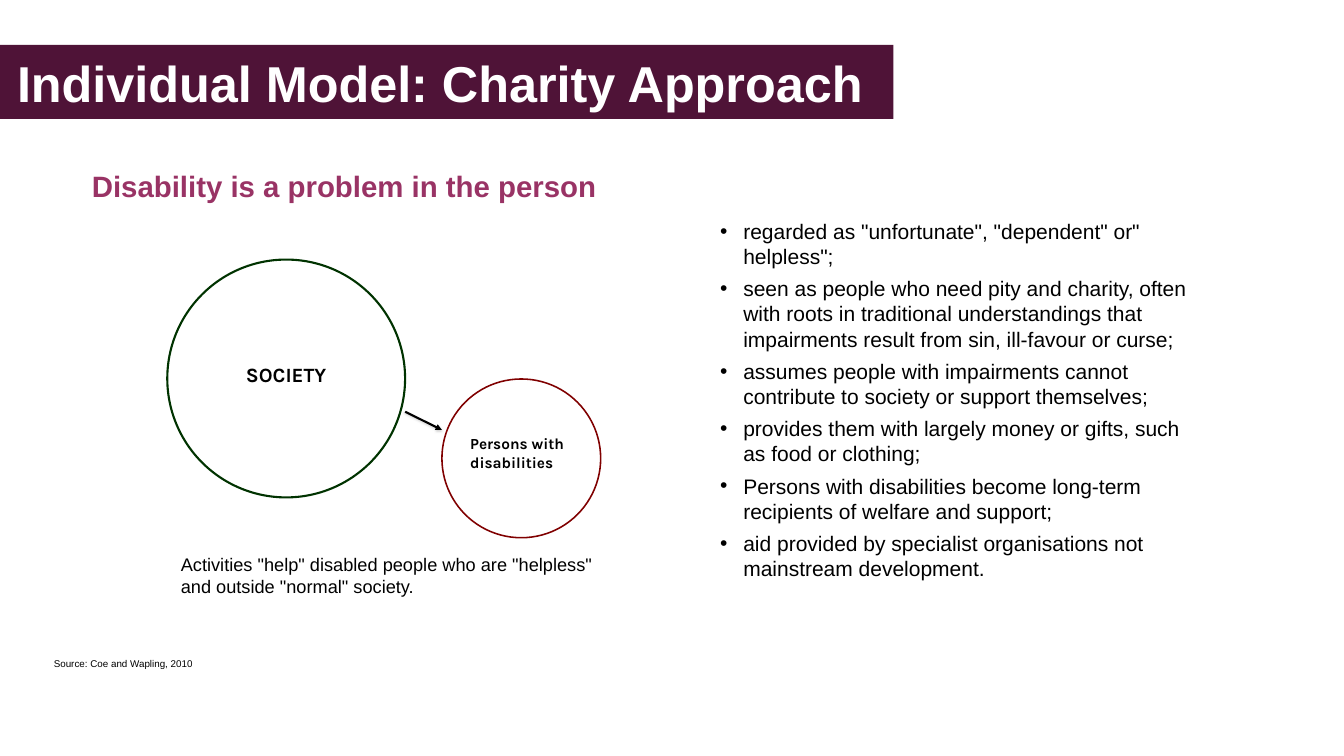
from dataclasses import dataclass
from typing import Optional

import pptx
import pptx.dml.color
import pptx.enum.shapes
import pptx.enum.text
import pptx.oxml
import pptx.oxml.ns
import pptx.util

Pt = pptx.util.Pt
Align = pptx.enum.text.PP_ALIGN
Anchor = pptx.enum.text.MSO_ANCHOR
ShapeKind = pptx.enum.shapes.MSO_SHAPE

COLORS = {
    "banner": "4F1337",
    "subtitle": "993365",
    "society": "003300",
    "persons": "800000",
    "text": "000000",
    "white": "FFFFFF",
    "shadow": "808080",
}

BULLETS = [
    'regarded as "unfortunate", "dependent" or" helpless";',
    "seen as people who need pity and charity, often with roots in traditional "
    "understandings that impairments result from sin, ill-favour or curse;",
    "assumes people with impairments cannot contribute to society or support themselves;",
    "provides them with largely money or gifts, such as food or clothing;",
    "Persons with disabilities become long-term recipients of welfare and support;",
    "aid provided by specialist organisations not mainstream development.",
]


@dataclass
class Box:
    left: float
    top: float
    width: float
    height: float


@dataclass
class Label:
    text: str
    size: float
    color: str = "text"
    font: str = "Arial"
    bold: bool = False
    align: Align = Align.LEFT
    anchor: Anchor = Anchor.TOP
    left_inset: float = 7.2
    top_inset: float = 3.6
    line_spacing: Optional[float] = None


@dataclass
class Figure:
    kind: ShapeKind
    box: Box
    label: Optional[Label] = None
    fill: Optional[str] = None
    line: Optional[str] = None
    line_width: float = 0


SUBTITLE = (Box(78.5, 241.9, 826.6, 51.1),
            Label("Disability is a problem in the person", 42, "subtitle", bold=True,
                  align=Align.CENTER, line_spacing=0.9))
CAPTION = (Box(251.3, 787, 614.2, 70.6),
           Label('Activities "help" disabled people who are "helpless" '
                 'and outside "normal" society.', 26))
SOURCE = (Box(69.8, 934.6, 252, 26.6),
          Label("Source: Coe and Wapling, 2010", 14, anchor=Anchor.MIDDLE))

FIGURES = [
    Figure(ShapeKind.OVAL, Box(239, 370.8, 339.8, 339.8), line="society", line_width=3),
    Figure(ShapeKind.OVAL, Box(631.4, 541.4, 226.8, 226.8),
           Label("Persons with disabilities", 22, font="Karla", bold=True, top_inset=46.1),
           line="persons", line_width=2.25),
    Figure(ShapeKind.RECTANGLE, Box(316.8, 514.1, 184.3, 52.6),
           Label("SOCIETY", 29, font="Karla", bold=True, align=Align.CENTER),
           fill="white"),
]


def color(name: str) -> pptx.dml.color.RGBColor:
    return pptx.dml.color.RGBColor.from_string(COLORS[name])


def place(shape, box: Box) -> None:
    shape.left, shape.top = Pt(box.left), Pt(box.top)
    shape.width, shape.height = Pt(box.width), Pt(box.height)


def add_run(paragraph, label: Label) -> None:
    run = paragraph.add_run()
    run.text = label.text
    run.font.size = Pt(label.size)
    run.font.name = label.font
    run.font.bold = label.bold
    run.font.color.rgb = color(label.color)


def set_frame(frame, label: Label) -> None:
    frame.word_wrap = True
    frame.auto_size = pptx.enum.text.MSO_AUTO_SIZE.NONE
    frame.vertical_anchor = label.anchor
    frame.margin_left, frame.margin_right = Pt(label.left_inset), Pt(7.2)
    frame.margin_top, frame.margin_bottom = Pt(label.top_inset), Pt(3.6)


def write(shape, label: Label) -> None:
    set_frame(shape.text_frame, label)
    paragraph = shape.text_frame.paragraphs[0]
    paragraph.alignment = label.align
    if label.line_spacing:
        paragraph.line_spacing = label.line_spacing
    add_run(paragraph, label)


def add_text(slide, box: Box, label: Label) -> None:
    shape = slide.shapes.add_textbox(Pt(box.left), Pt(box.top), Pt(box.width), Pt(box.height))
    write(shape, label)


def add_figure(slide, figure: Figure) -> None:
    shape = slide.shapes.add_shape(figure.kind, 0, 0, 0, 0)
    place(shape, figure.box)
    shape.shadow.inherit = False
    if figure.fill:
        shape.fill.solid()
        shape.fill.fore_color.rgb = color(figure.fill)
    else:
        shape.fill.background()
    if figure.line:
        shape.line.color.rgb = color(figure.line)
        shape.line.width = Pt(figure.line_width)
    else:
        shape.line.fill.background()
    if figure.label:
        write(shape, figure.label)


def add_arrow(slide, start: tuple[float, float], end: tuple[float, float]) -> None:
    connector = slide.shapes.add_connector(
        pptx.enum.shapes.MSO_CONNECTOR.STRAIGHT, *map(Pt, start + end))
    connector.line.color.rgb = color("text")
    connector.line.width = Pt(3)
    namespace = pptx.oxml.ns.nsdecls("a")
    connector.line._get_or_add_ln().append(
        pptx.oxml.parse_xml(f'<a:tailEnd {namespace} type="triangle"/>'))
    connector._element.spPr.append(pptx.oxml.parse_xml(
        f'<a:effectLst {namespace}><a:outerShdw blurRad="{Pt(3.1)}" dist="{Pt(1.8)}" '
        f'dir="5400000" rotWithShape="0"><a:srgbClr val="{COLORS["shadow"]}">'
        '<a:alpha val="35000"/></a:srgbClr></a:outerShdw></a:effectLst>'))


def add_bullet(paragraph) -> None:
    properties = paragraph._p.get_or_add_pPr()
    properties.set("marL", str(Pt(36)))
    properties.set("indent", str(Pt(-33)))
    namespace = pptx.oxml.ns.nsdecls("a")
    for xml in (f'<a:buClr {namespace}><a:srgbClr val="{COLORS["text"]}"/></a:buClr>',
                f'<a:buFont {namespace} typeface="Arial"/>',
                f'<a:buChar {namespace} char="•"/>'):
        properties.append(pptx.oxml.parse_xml(xml))


def fill_list(body, items: list[str]) -> None:
    frame = body.text_frame
    set_frame(frame, Label("", 30))
    for index, item in enumerate(items):
        paragraph = frame.add_paragraph() if index else frame.paragraphs[0]
        paragraph.space_before = Pt(10 if index else 0)
        add_bullet(paragraph)
        add_run(paragraph, Label(item, 30))


def main() -> None:
    presentation = pptx.Presentation()
    presentation.slide_width, presentation.slide_height = Pt(1920.24), Pt(1080)
    slide = presentation.slides.add_slide(presentation.slide_layouts[1])

    # Title banner
    title = slide.shapes.title
    place(title, Box(0, 64.1, 1276.6, 105.8))
    title.fill.solid()
    title.fill.fore_color.rgb = color("banner")
    write(title, Label("Individual Model: Charity Approach", 72, "white", bold=True,
                       anchor=Anchor.MIDDLE, left_inset=24.3))

    # Features of the approach
    body = slide.placeholders[1]
    place(body, Box(1018.8, 308.2, 709.9, 558.7))
    fill_list(body, BULLETS)

    # Society and persons diagram
    for figure in FIGURES:
        add_figure(slide, figure)
    add_arrow(slide, (578.9, 588.2), (631.4, 614.2))

    # Subtitle, caption and source
    for box, label in (SUBTITLE, CAPTION, SOURCE):
        add_text(slide, box, label)

    presentation.save("out.pptx")


if __name__ == "__main__":
    main()
